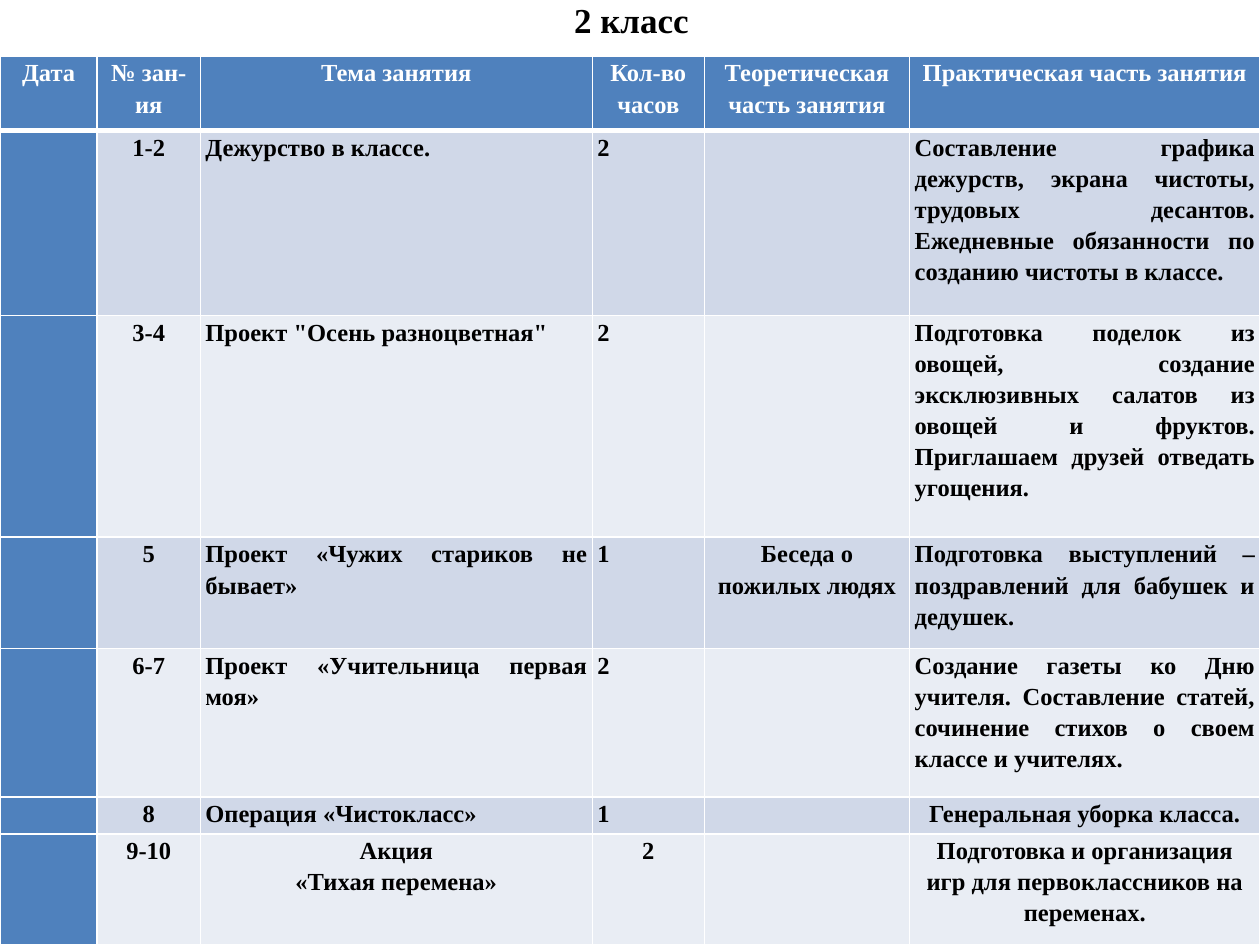
import lxml.etree
import pptx
import pptx.dml.color
import pptx.enum.text
import pptx.oxml.ns
import pptx.util

Cm = pptx.util.Cm
Pt = pptx.util.Pt
RGBColor = pptx.dml.color.RGBColor
ALIGN = pptx.enum.text.PP_ALIGN
qn = pptx.oxml.ns.qn

BLUE = RGBColor(0x4F, 0x81, 0xBD)
BAND_DARK = RGBColor(0xD0, 0xD8, 0xE8)
BAND_LIGHT = RGBColor(0xE9, 0xED, 0xF4)
WHITE = RGBColor(0xFF, 0xFF, 0xFF)
BLACK = RGBColor(0, 0, 0)
FONT = "Times New Roman"
TEXT_SIZE = 14

COLUMN_WIDTHS = [1.96, 2.08, 7.9, 2.26, 4.14, 7.06]
ROW_HEIGHTS = [1.5, 3.73, 4.47, 2.24, 3, 0.74, 2.24]
CENTRED_COLUMNS = (1, 4)
CENTRED_ROWS = (0, 6)
CENTRED_CELLS = ((5, 5),)

LESSONS = [
    ["Дата", "№ зан-ия", "Тема занятия", "Кол-во часов",
     "Теоретическая часть занятия", "Практическая часть занятия"],
    ["", "1-2", "Дежурство в классе.", "2", "",
     "Составление графика дежурств, экрана чистоты, трудовых десантов. "
     "Ежедневные обязанности по созданию чистоты в классе."],
    ["", "3-4", "Проект \"Осень разноцветная\"", "2", "",
     "Подготовка поделок из овощей, создание эксклюзивных салатов из овощей "
     "и фруктов. Приглашаем друзей отведать угощения."],
    ["", "5", "Проект «Чужих стариков не бывает»", "1", "Беседа о пожилых людях",
     "Подготовка выступлений –поздравлений для бабушек и дедушек."],
    ["", "6-7", "Проект «Учительница первая моя»", "2", "",
     "Создание газеты ко Дню учителя. Составление статей, сочинение стихов "
     "о своем классе и учителях."],
    ["", "8", "Операция «Чистокласс»", "1", "", "Генеральная уборка класса."],
    ["", "9-10", "Акция\n«Тихая перемена»", "2", "",
     "Подготовка и организация игр для первоклассников на переменах."],
]


def style_paragraph(paragraph, size, color, alignment):
    """Align a paragraph and format its runs."""
    paragraph.alignment = alignment
    for run in paragraph.runs:
        run.font.name = FONT
        run.font.size = Pt(size)
        run.font.bold = True
        run.font.color.rgb = color


def add_title(slide, left, top, width, height):
    """Write the class name in the given box."""
    title = slide.shapes.add_textbox(left, top, width, height)
    frame = title.text_frame
    frame.word_wrap = True
    frame.vertical_anchor = pptx.enum.text.MSO_ANCHOR.MIDDLE
    frame.text = "2 класс"
    style_paragraph(frame.paragraphs[0], 20, BLACK, ALIGN.CENTER)


def draw_borders(cell, row):
    """Give a cell white borders, thicker under the header."""
    widths = {"L": 1, "R": 1, "T": 3 if row == 1 else 1, "B": 3 if row == 0 else 1}
    properties = cell._tc.get_or_add_tcPr()
    for side, width in widths.items():
        line = lxml.etree.SubElement(properties, qn(f"a:ln{side}"), w=str(Pt(width)))
        fill = lxml.etree.SubElement(line, qn("a:solidFill"))
        lxml.etree.SubElement(fill, qn("a:srgbClr"), val=str(WHITE))


def fill_cell(cell, row, column, text):
    """Set the text, borders and fill of one cell."""
    cell.margin_left = cell.margin_right = Cm(0.1)
    cell.margin_top = cell.margin_bottom = 0
    draw_borders(cell, row)
    cell.fill.solid()
    band = BAND_DARK if row % 2 else BAND_LIGHT
    cell.fill.fore_color.rgb = BLUE if row == 0 or column == 0 else band
    if not text:
        paragraph = cell.text_frame.paragraphs[0]._p
        lxml.etree.SubElement(paragraph, qn("a:endParaRPr"), sz=str(TEXT_SIZE * 100))
        return
    centred = (row in CENTRED_ROWS or column in CENTRED_COLUMNS
               or (row, column) in CENTRED_CELLS)
    cell.text_frame.text = text
    for paragraph in cell.text_frame.paragraphs:
        paragraph.line_spacing = 1.15
        style_paragraph(paragraph, TEXT_SIZE, BLACK if row else WHITE,
                        ALIGN.CENTER if centred else ALIGN.JUSTIFY)


def add_lesson_table(slide, left, top, width, height):
    """Build the lesson plan table in the given box."""
    table = slide.shapes.add_table(
        len(ROW_HEIGHTS), len(COLUMN_WIDTHS), left, top, width, height).table
    for column, share in zip(table.columns, COLUMN_WIDTHS):
        column.width = int(width * share / sum(COLUMN_WIDTHS))
    for table_row, share in zip(table.rows, ROW_HEIGHTS):
        table_row.height = int(height * share / sum(ROW_HEIGHTS))
    for row, lesson in enumerate(LESSONS):
        for column, text in enumerate(lesson):
            fill_cell(table.cell(row, column), row, column, text)


def main():
    """Build and save the slide."""
    presentation = pptx.Presentation()
    presentation.slide_width = Cm(25.4)
    presentation.slide_height = Cm(19.05)
    slide = presentation.slides.add_slide(presentation.slide_layouts[6])
    add_title(slide, Cm(1.3), Cm(-0.48), Cm(22.86), Cm(1.75))
    add_lesson_table(slide, 0, Cm(1.13), Cm(25.4), Cm(17.92))
    presentation.save("out.pptx")


if __name__ == "__main__":
    main()
